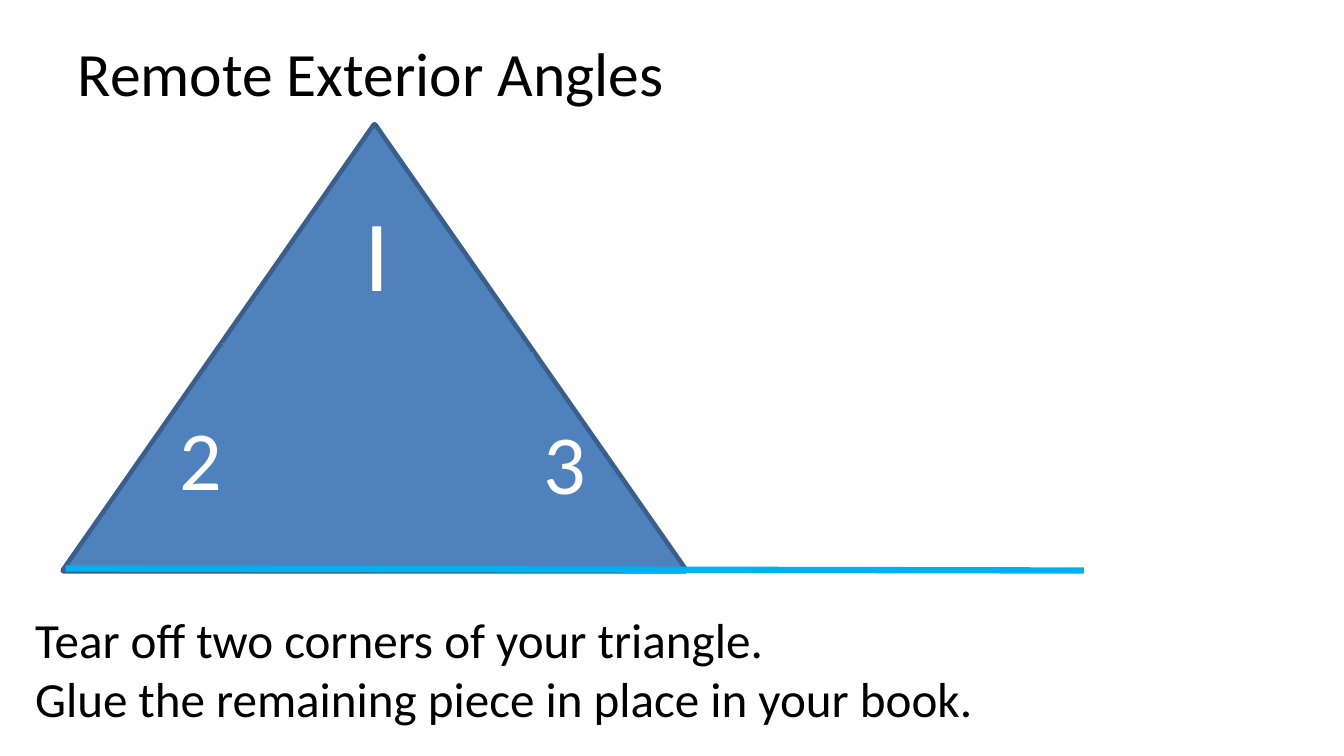
from dataclasses import dataclass
from math import hypot, pi, sin

from lxml import etree
from pptx import Presentation
from pptx.dml.color import RGBColor
from pptx.enum.shapes import MSO_CONNECTOR, MSO_SHAPE
from pptx.enum.text import MSO_ANCHOR, MSO_AUTO_SIZE, PP_ALIGN
from pptx.oxml.ns import qn
from pptx.util import Inches, Pt

TOP, MIDDLE = MSO_ANCHOR.TOP, MSO_ANCHOR.MIDDLE
LEFT, CENTER = PP_ALIGN.LEFT, PP_ALIGN.CENTER
TRIANGLE, STRAIGHT = MSO_SHAPE.ISOSCELES_TRIANGLE, MSO_CONNECTOR.STRAIGHT
BLUE, EDGE, CYAN = "4F81BD", "3A5F8C", "00B0F0"
WHITE, BLACK = "FFFFFF", "000000"

Point = tuple[float, float]


def along(start: Point, end: Point, part: float) -> Point:
    """Return the point that lies this part of the way from start to end."""
    return (start[0] + part * (end[0] - start[0]),
            start[1] + part * (end[1] - start[1]))


# The whole triangle, in inches
X, Y, WIDTH, HEIGHT = 0.63, 1.24, 6.17, 4.42
APEX = (X + WIDTH / 2, Y)
WEST = (X, Y + HEIGHT)
EAST = (X + WIDTH, Y + HEIGHT)

# Where the tears meet its sides
WEST_CUT = along(APEX, WEST, 0.49)
EAST_CUT = along(APEX, EAST, 0.51)
WEST_FOOT = along(WEST, EAST, 0.44)
EAST_FOOT = along(WEST, EAST, 0.71)

# A torn side is a bow with small ripples on it
STEPS, WAVES, RIPPLE = 24, 6, 0.02


@dataclass
class Side:
    """A side from its start to the next side's start; bow 0 is straight."""
    start: Point
    bow: float = 0


@dataclass
class Piece:
    """Sides run clockwise, so a positive bow swells outwards."""
    sides: list[Side]
    label: str = ""
    size: float = 60
    align: int = CENTER
    inset: float = 0.1
    edge: bool = True


CORNERS = [
    Piece([Side(WEST_CUT), Side(APEX), Side(EAST_CUT, 0.27)], "I", size=72),
    Piece([Side(WEST), Side(WEST_CUT, 0.1), Side(WEST_FOOT)], "2"),
    Piece([Side(EAST_FOOT, 0.2), Side(EAST_CUT), Side(EAST)], "3",
          align=LEFT, inset=0.48),
]
MIDDLE_PIECE = Piece([Side(WEST_CUT, 0.08), Side(EAST_CUT, 0.12),
                      Side(EAST_FOOT), Side(WEST_FOOT, 0.12)], edge=False)


def trace(start: Point, end: Point, bow: float) -> list[Point]:
    """Return the points of one side, without its end."""
    if not bow:
        return [start]
    dx, dy = end[0] - start[0], end[1] - start[1]
    length = hypot(dx, dy)
    points = []
    for step in range(STEPS):
        part = step / STEPS
        push = bow * sin(pi * part) + RIPPLE * sin(WAVES * pi * part)
        x, y = along(start, end, part)
        points.append((x + push * dy / length, y - push * dx / length))
    return points


def paint(fill, color: str) -> None:
    fill.solid()
    fill.fore_color.rgb = RGBColor.from_string(color)


def outline(shape, color: str, width: float) -> None:
    paint(shape.line.fill, color)
    shape.line.width = Pt(width)


def write(shape, text: str, *, size: float, color: str = BLACK,
          align: int = LEFT, anchor: int = TOP, inset: float = 0.1) -> None:
    frame = shape.text_frame
    frame.word_wrap = True
    frame.auto_size = MSO_AUTO_SIZE.NONE
    frame.vertical_anchor = anchor
    frame.margin_left = Inches(inset)
    frame.text = text
    for para in frame.paragraphs:
        para.alignment = align
        for run in para.runs:
            run.font.name = "Calibri"
            run.font.size = Pt(size)
            paint(run.font.fill, color)


def draw(shapes, piece: Piece) -> None:
    nexts = piece.sides[1:] + piece.sides[:1]
    spots = [(Inches(x), Inches(y))
             for side, after in zip(piece.sides, nexts)
             for x, y in trace(side.start, after.start, side.bow)]
    pen = shapes.build_freeform(*spots[0])
    pen.add_line_segments(spots[1:], close=True)
    shape = pen.convert_to_shape()
    shape.shadow.inherit = False
    paint(shape.fill, BLUE)
    if piece.edge:
        outline(shape, EDGE, 2)
    else:
        shape.line.fill.background()
    if piece.label:
        write(shape, piece.label, size=piece.size, color=WHITE,
              align=piece.align, anchor=MIDDLE, inset=piece.inset)


def main() -> None:
    deck = Presentation()
    deck.slide_width, deck.slide_height = Inches(13.33), Inches(7.5)
    shapes = deck.slides.add_slide(deck.slide_layouts[5]).shapes

    title = shapes.title
    title.left, title.top = Inches(0.67), Inches(0.3)
    title.width, title.height = Inches(12), Inches(1.7)
    write(title, "Remote Exterior Angles", size=44)

    whole = shapes.add_shape(TRIANGLE, Inches(X), Inches(Y),
                             Inches(WIDTH), Inches(HEIGHT))
    whole.shadow.inherit = False
    whole.fill.background()
    outline(whole, EDGE, 4.5)

    for piece in [*CORNERS, MIDDLE_PIECE]:
        draw(shapes, piece)

    steps = shapes.add_textbox(Inches(0.25), Inches(6), Inches(12), Inches(1.48))
    write(steps, "Tear off two corners of your triangle.\v"
                 "Glue the remaining piece in place in your book.", size=35.1)

    base = shapes.add_connector(STRAIGHT, Inches(0.65), Inches(5.64),
                                Inches(10.75), Inches(5.66))
    outline(base, CYAN, 4.5)
    etree.SubElement(base.element.spPr, qn("a:effectLst"))

    deck.save("out.pptx")


if __name__ == "__main__":
    main()
